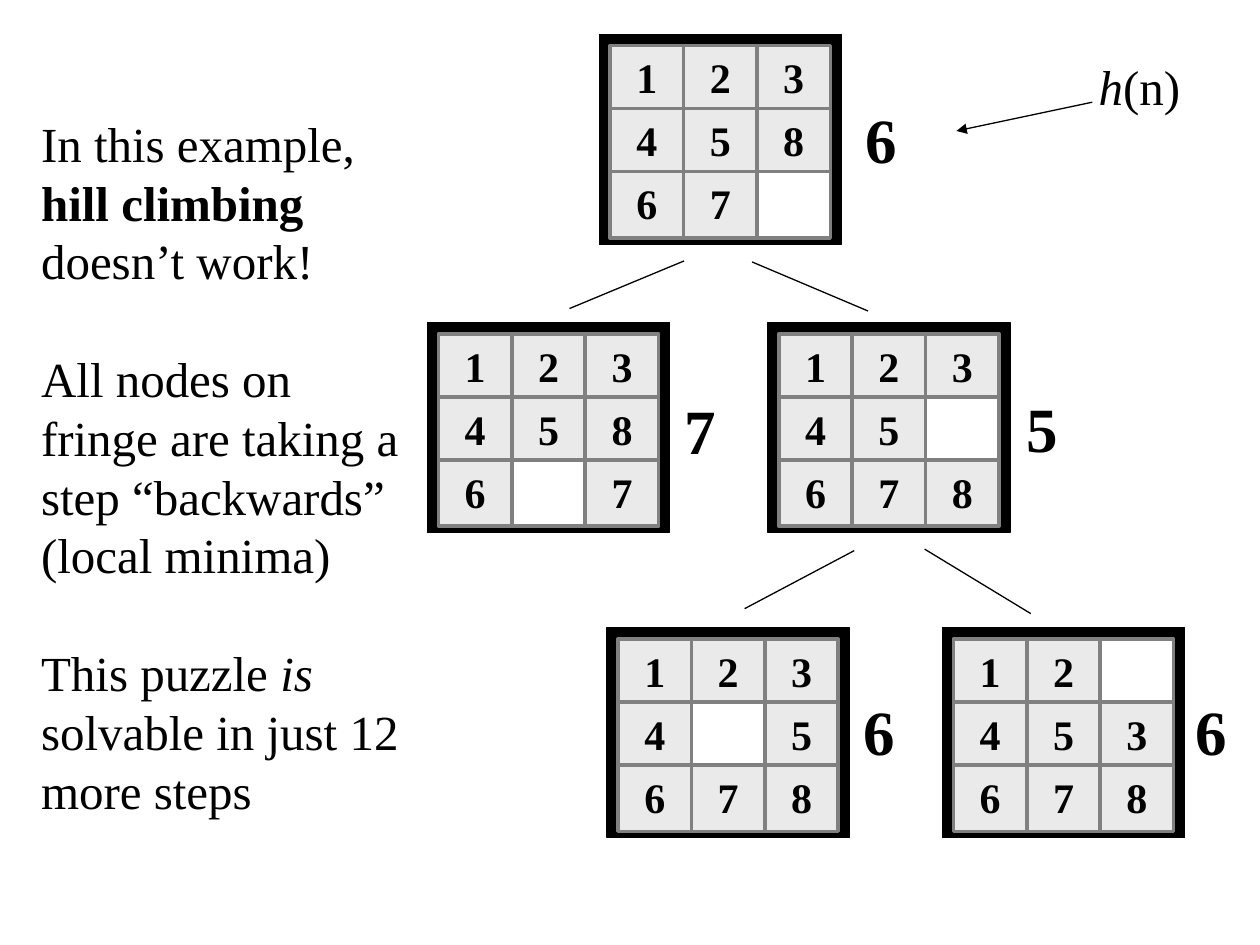
"""Build a slide showing a hill-climbing search tree for the eight puzzle."""
import pptx
import pptx.dml.color
import pptx.enum.shapes
import pptx.enum.text
import pptx.oxml.ns
import pptx.util
from lxml import etree

Cm = pptx.util.Cm
Pt = pptx.util.Pt
BLACK = pptx.dml.color.RGBColor(0x00, 0x00, 0x00)
WHITE = pptx.dml.color.RGBColor(0xFF, 0xFF, 0xFF)
GREY = pptx.dml.color.RGBColor(0x80, 0x80, 0x80)
TILE = pptx.dml.color.RGBColor(0xEA, 0xEA, 0xEA)
GROW = pptx.enum.text.MSO_AUTO_SIZE.SHAPE_TO_FIT_TEXT
TOP = pptx.enum.text.MSO_ANCHOR.TOP
CENTER = pptx.enum.text.PP_ALIGN.CENTER


def add_spans(para, spans, size):
    for text, style in spans:
        span = para.add_run()
        span.text = text
        values = {"name": "Times New Roman", "size": Pt(size), "bold": False, "italic": False}
        for name, value in (values | style).items():
            setattr(span.font, name, value)
        span.font.color.rgb = BLACK


def add_square(group, left, top, width, height, fill, line, weight):
    square = group.shapes.add_shape(
        pptx.enum.shapes.MSO_SHAPE.RECTANGLE, Cm(left), Cm(top), Cm(width), Cm(height))
    square.shadow.inherit = False
    square.fill.solid()
    square.fill.fore_color.rgb = fill
    square.line.color.rgb = line
    square.line.width = Pt(weight)
    return square


deck = pptx.Presentation()
deck.slide_width, deck.slide_height = Cm(25.4), Cm(19.05)
page = deck.slides.add_slide(deck.slide_layouts[6])

boards = [
    (12.08, 0.69, "12345867 "),
    (15.48, 6.5, "12345 678"),
    (8.62, 6.5, "1234586 7"),
    (12.24, 12.65, "1234 5678"),
    (19, 12.65, "12 453678"),
]
for left, top, tiles in boards:
    group = page.shapes.add_group_shape()
    add_square(group, left, top, 4.88, 4.24, BLACK, BLACK, 0.75)
    for index, digit in enumerate(tiles):
        row, column = divmod(index, 3)
        blank = digit == " "
        tile = add_square(group, left + 0.22 + 1.48 * column, top + 0.23 + 1.27 * row,
                          1.48, 1.34, WHITE if blank else TILE, GREY, 2)
        if not blank:
            tile.text_frame.auto_size = GROW
            tile.text_frame.vertical_anchor = TOP
            para = tile.text_frame.paragraphs[0]
            para.alignment = CENTER
            add_spans(para, [(digit, {"bold": True})], 24)

links = [
    (13.79, 5.26, 11.48, 6.22),
    (15.16, 5.28, 17.5, 6.27),
    (17.22, 11.1, 15.01, 12.27),
    (18.64, 11.07, 20.78, 12.37),
    (22.02, 2.06, 19.28, 2.64),
]
for ends in links:
    link = page.shapes.add_connector(
        pptx.enum.shapes.MSO_CONNECTOR.STRAIGHT, *[Cm(end) for end in ends])
    link.line.color.rgb = BLACK
    link.line.width = Pt(0.75)
    etree.SubElement(link.element.spPr, pptx.oxml.ns.qn("a:effectLst"))
arrow_line = link.line.fill and link.element.spPr.find(pptx.oxml.ns.qn("a:ln"))
etree.SubElement(arrow_line, pptx.oxml.ns.qn("a:tailEnd"), type="triangle")

BOLD, ITALIC = {"bold": True}, {"italic": True}
explanation = [
    (0, [("In this example, ", {}), ("hill climbing ", BOLD), ("doesn’t work!", {})]),
    (33.5, [("All nodes on fringe are taking a step “backwards”", {})]),
    (0, [("(local minima)", {})]),
    (33.5, [("This puzzle ", {}), ("is", ITALIC), (" solvable in just 12 more steps", {})]),
]
scores = [
    (17.2, 1.9, "6"),
    (13.54, 7.77, "7"),
    (20.45, 7.72, "5"),
    (17.15, 13.84, "6"),
    (23.85, 13.84, "6"),
]
texts = [(left, top, 1.14, 1.78, False, 36, [(0, [(score, BOLD)])])
         for left, top, score in scores]
texts += [
    (0.58, 2.16, 8.08, 14.63, True, 28, explanation),
    (21.9, 1.02, 2.16, 1.45, False, 28, [(0, [("h", ITALIC), ("(n)", {})])]),
]
for left, top, width, height, wrap, size, paras in texts:
    box = page.shapes.add_textbox(Cm(left), Cm(top), Cm(width), Cm(height))
    frame = box.text_frame
    for name, value in {"word_wrap": wrap, "auto_size": GROW, "vertical_anchor": TOP}.items():
        setattr(frame, name, value)
    for index, (gap, spans) in enumerate(paras):
        para = frame.add_paragraph() if index else frame.paragraphs[0]
        para.space_before = Pt(gap)
        add_spans(para, spans, size)

deck.save("out.pptx")
